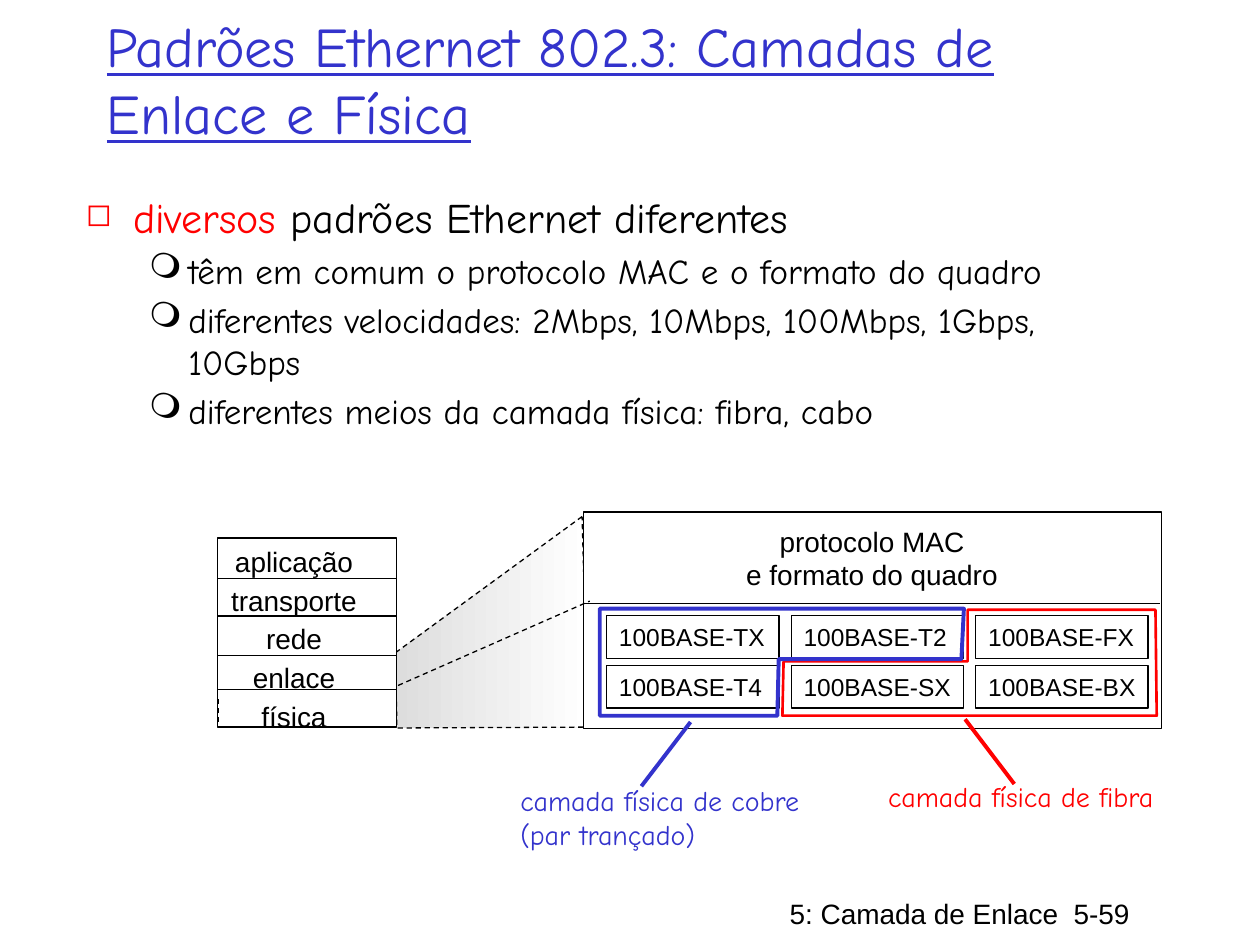
import pptx
import pptx.util
import pptx.dml.color
import pptx.enum.dml
import pptx.enum.shapes
import pptx.enum.text
import pptx.oxml.ns
import lxml.etree

Pt = pptx.util.Pt
ALIGN = pptx.enum.text.PP_ALIGN
ANCHOR = pptx.enum.text.MSO_ANCHOR
COLORS = {
    "black": "000000",
    "white": "FFFFFF",
    "grey": "DDDDDD",
    "red": "FF0000",
    "blue": "3333CC",
}
SANS = "Arial"
COMIC = "Comic Neue"


def rgb(name):
    return pptx.dml.color.RGBColor.from_string(COLORS[name])


def style_run(run, size, font, color, underline=None):
    run.font.size = Pt(size)
    run.font.name = font
    run.font.underline = underline
    run.font.color.rgb = rgb(color)


def style_line(line, color, width, dashed=False):
    line.color.rgb = rgb(color)
    line.width = Pt(width)
    if dashed:
        line.dash_style = pptx.enum.dml.MSO_LINE.DASH


def write_text(text_frame, text, size, font, color, align=ALIGN.LEFT,
               wrap=False, spacing=None, underline=None):
    text_frame.text = text
    text_frame.word_wrap = wrap
    for paragraph in text_frame.paragraphs:
        paragraph.alignment = align
        if spacing:
            paragraph.line_spacing = Pt(spacing)
        for run in paragraph.runs:
            style_run(run, size, font, color, underline)


def add_text(slide, box, text, size, font, color, anchor=ANCHOR.TOP, **options):
    shape = slide.shapes.add_textbox(*map(Pt, box))
    shape.text_frame.vertical_anchor = anchor
    write_text(shape.text_frame, text, size, font, color, **options)


def add_box(slide, box, fill=None):
    shape = slide.shapes.add_shape(pptx.enum.shapes.MSO_SHAPE.RECTANGLE, *map(Pt, box))
    shape.shadow.inherit = False
    if fill:
        shape.fill.solid()
        shape.fill.fore_color.rgb = rgb(fill)
    else:
        shape.fill.background()
    style_line(shape.line, "black", 0.75)
    return shape


def add_line(slide, start, end, color="black", width=0.75, dashed=False):
    connector = slide.shapes.add_connector(
        pptx.enum.shapes.MSO_CONNECTOR.STRAIGHT, *map(Pt, start + end))
    style_line(connector.line, color, width, dashed)
    lxml.etree.SubElement(connector._element.spPr, pptx.oxml.ns.qn("a:effectLst"))


def add_outline(slide, points, color, width, dashed=False):
    vertices = [(Pt(x), Pt(y)) for x, y in points]
    builder = slide.shapes.build_freeform(*vertices[0])
    builder.add_line_segments(vertices[1:], close=True)
    shape = builder.convert_to_shape()
    shape.shadow.inherit = False
    shape.fill.background()
    style_line(shape.line, color, width, dashed)
    return shape


def add_bullet(paragraph, character, color, percent, left, hanging):
    properties = paragraph._p.get_or_add_pPr()
    properties.set("marL", str(Pt(left)))
    properties.set("indent", str(-Pt(hanging)))
    qn = pptx.oxml.ns.qn
    bullet_color = lxml.etree.SubElement(properties, qn("a:buClr"))
    lxml.etree.SubElement(bullet_color, qn("a:srgbClr"), val=COLORS[color])
    lxml.etree.SubElement(properties, qn("a:buSzPct"), val=str(percent * 1000))
    lxml.etree.SubElement(properties, qn("a:buChar"), char=character)


def add_body(slide):
    shape = slide.shapes.add_textbox(Pt(42), Pt(106), Pt(612), Pt(197))
    text_frame = shape.text_frame
    text_frame.word_wrap = True
    heading = text_frame.paragraphs[0]
    add_bullet(heading, "◻", "red", 75, 27, 27)
    for text, color in (("diversos ", "red"), ("padrões Ethernet diferentes", "black")):
        run = heading.add_run()
        run.text = text
        style_run(run, 24, COMIC, color)
    for text in (
        "têm em comum o protocolo MAC e o formato do quadro",
        "diferentes velocidades: 2Mbps, 10Mbps, 100Mbps, 1Gbps, 10Gbps",
        "diferentes meios da camada física: fibra, cabo",
    ):
        paragraph = text_frame.add_paragraph()
        paragraph.text = text
        paragraph.level = 1
        add_bullet(paragraph, "❍", "black", 100, 58.5, 22.5)
        paragraph.space_before = Pt(4)
        style_run(paragraph.runs[0], 20, COMIC, "black")


def add_projection(slide):
    points = [(332.6, 295.2), (226, 373), (226.8, 416), (336, 415.5)]
    shape = add_outline(slide, points, "black", 0.75, dashed=True)
    shape.fill.gradient()
    shape.fill.gradient_angle = 0
    for stop, color in zip(shape.fill.gradient_stops, ("grey", "white")):
        stop.color.rgb = rgb(color)


def add_layer_stack(slide):
    left, right = 124.5, 226.5
    add_box(slide, (left, 307.5, right - left, 108), "white")
    layers = "aplicação\ntransporte\nrede\nenlace\nfísica"
    add_text(slide, (left, 304.5, 87, 116.5), layers, 16, SANS, "black",
             align=ALIGN.CENTER, spacing=22.2)
    for y in (330.5, 352, 374.4, 394.2):
        add_line(slide, (left, y), (right, y))
    for x in (left, right):
        add_line(slide, (x, 399.5), (x, 413.5), dashed=True)


def add_standards(slide):
    add_box(slide, (333.4, 292.5, 330.5, 123.8), "white")
    add_line(slide, (334, 345), (663, 345))
    add_text(slide, (418.3, 296, 160, 46), "protocolo MAC\ne formato do quadro",
             16, SANS, "black", align=ALIGN.CENTER)
    add_line(slide, (227.5, 391.7), (337, 343.5), dashed=True)
    rows = (("TX", "T2", "FX"), ("T4", "SX", "BX"))
    for row, names in enumerate(rows):
        for column, name in enumerate(names):
            box = (346.6 + 105.5 * column, 351.8 + 28.4 * row, 98.5, 24.5)
            shape = add_box(slide, box)
            write_text(shape.text_frame, "100BASE-" + name, 14, SANS, "black")


def add_media_groups(slide):
    fiber = [(553, 348.5), (553, 378), (447.8, 378), (447.1, 409),
             (661, 409), (660.3, 348.5)]
    add_outline(slide, fiber, "red", 1.5)
    add_line(slide, (551.5, 411), (579.6, 448), "red", 2.25)
    add_text(slide, (500.4, 442, 183, 26.6), "camada física de fibra", 16, COMIC, "red")

    copper = [(550.8, 347.8), (549.4, 376.6), (445, 376.6), (444.2, 409),
              (342.7, 409), (342.7, 347.8)]
    add_outline(slide, copper, "blue", 2.25)
    add_line(slide, (394.6, 412.6), (366.5, 449.3), "blue", 2.25)
    add_text(slide, (290.2, 444.2, 192, 46), "camada física de cobre\n(par trançado)",
             16, COMIC, "blue")


def main():
    presentation = pptx.Presentation()
    presentation.slide_width = Pt(720)
    presentation.slide_height = Pt(540)
    slide = presentation.slides.add_slide(presentation.slide_layouts[6])
    add_text(slide, (444.2, 509, 275.8, 26.6), "5: Camada de Enlace  5-59",
             16, SANS, "black", wrap=True)
    add_text(slide, (54, 12, 612, 66), "Padrões Ethernet 802.3: Camadas de Enlace e Física",
             32, COMIC, "blue", anchor=ANCHOR.MIDDLE, wrap=True, underline=True)
    add_body(slide)
    add_projection(slide)
    add_layer_stack(slide)
    add_standards(slide)
    add_media_groups(slide)
    presentation.save("out.pptx")


if __name__ == "__main__":
    main()
